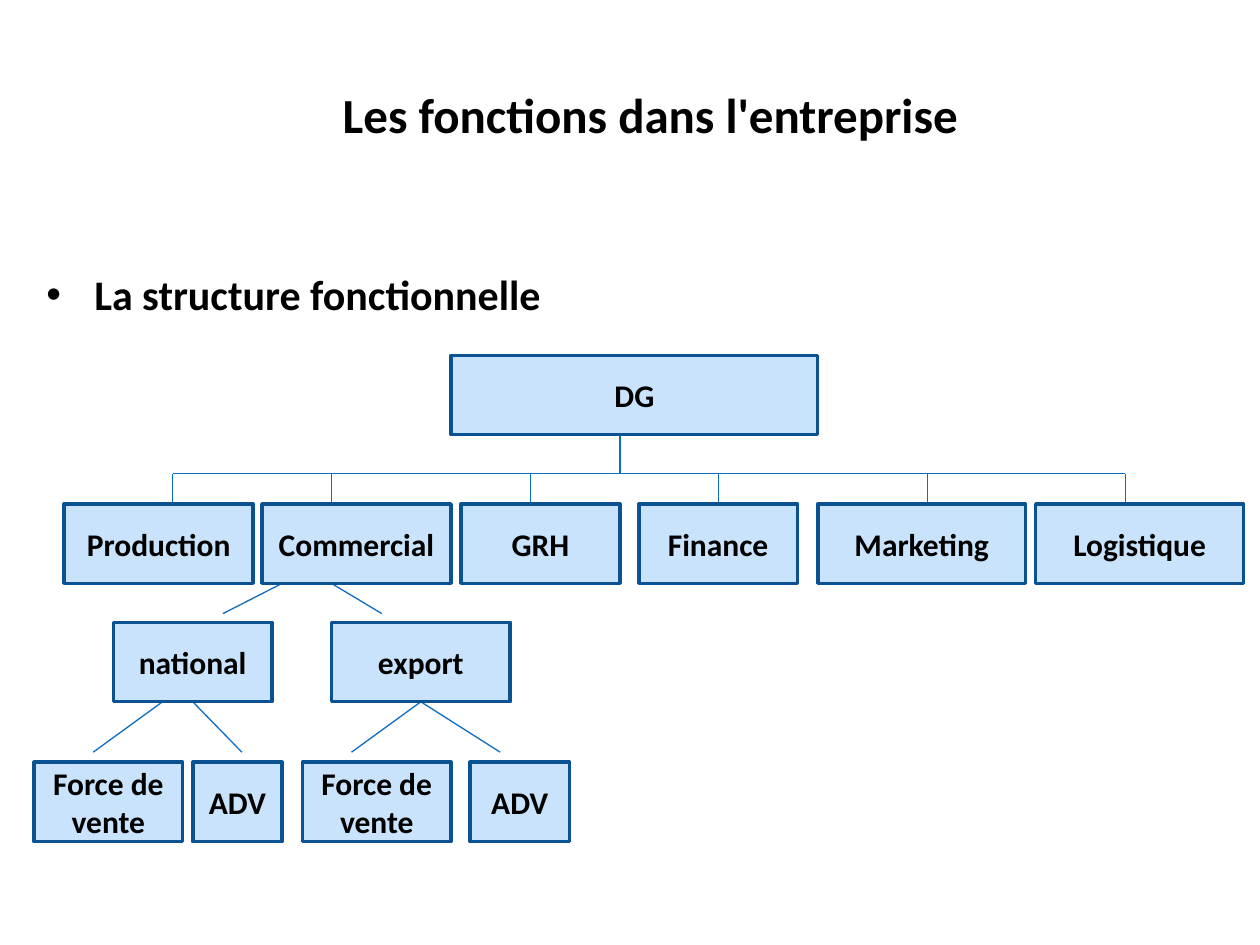
from lxml.etree import SubElement
from pptx import Presentation
from pptx.dml.color import RGBColor
from pptx.enum.shapes import MSO_CONNECTOR, MSO_SHAPE
from pptx.enum.text import MSO_ANCHOR, PP_ALIGN
from pptx.oxml.ns import qn
from pptx.util import Inches, Pt


def color(value):
    return RGBColor.from_string(value)


class OrganizationSlide:
    font_name = "Calibri"
    text_color = "000000"
    box_fill = "C8E3FB"
    box_border = "0B5292"
    link_color = "0A6DC6"
    box_height = 0.63

    def __init__(self, presentation):
        self.slide = presentation.slides.add_slide(presentation.slide_layouts[6])

    def set_text(self, shape, text, size, alignment, anchor, bullet=False):
        frame = shape.text_frame
        frame.word_wrap = True
        frame.vertical_anchor = anchor
        paragraph = frame.paragraphs[0]
        paragraph.text = text
        paragraph.alignment = alignment
        if bullet:
            properties = paragraph._p.get_or_add_pPr()
            properties.set("marL", str(Inches(0.38)))
            properties.set("indent", str(Inches(-0.38)))
            SubElement(properties, qn("a:buFont")).set("typeface", "Arial")
            SubElement(properties, qn("a:buChar")).set("char", "•")
        font = paragraph.font
        font.name = self.font_name
        font.size = Pt(size)
        font.bold = True
        font.color.rgb = color(self.text_color)

    def text(self, text, left, top, width, height, size, alignment, anchor, bullet=False):
        shape = self.slide.shapes.add_textbox(
            Inches(left), Inches(top), Inches(width), Inches(height))
        self.set_text(shape, text, size, alignment, anchor, bullet)

    def box(self, text, left, top, width):
        shape = self.slide.shapes.add_shape(
            MSO_SHAPE.RECTANGLE, Inches(left), Inches(top),
            Inches(width), Inches(self.box_height))
        shape.shadow.inherit = False
        shape.fill.solid()
        shape.fill.fore_color.rgb = color(self.box_fill)
        shape.line.color.rgb = color(self.box_border)
        shape.line.width = Pt(2)
        self.set_text(shape, text, 18, PP_ALIGN.CENTER, MSO_ANCHOR.MIDDLE)

    def link(self, start_x, start_y, end_x, end_y):
        connector = self.slide.shapes.add_connector(
            MSO_CONNECTOR.STRAIGHT, Inches(start_x), Inches(start_y),
            Inches(end_x), Inches(end_y))
        connector.line.color.rgb = color(self.link_color)
        connector.line.width = Pt(0.75)
        SubElement(connector._element.spPr, qn("a:effectLst"))


def main():
    presentation = Presentation()
    presentation.slide_width = Inches(10)
    presentation.slide_height = Inches(7.5)
    chart = OrganizationSlide(presentation)

    # Title and heading
    chart.text("Les fonctions dans l'entreprise", 1.67, 0.62, 6.98, 0.57, 28,
               PP_ALIGN.CENTER, MSO_ANCHOR.TOP)
    chart.text("La structure fonctionnelle", 0.27, 1.87, 7.58, 0.92, 24,
               PP_ALIGN.LEFT, MSO_ANCHOR.MIDDLE, bullet=True)

    # Rows of the chart: top, then (label, left, width) of each box
    director_top, function_top, market_top, team_top = 2.82, 4, 4.94, 6.05
    rows = [
        (director_top, [("DG", 3.58, 2.91)]),
        (function_top, [("Production", 0.51, 1.5), ("Commercial", 2.08, 1.5),
                        ("GRH", 3.66, 1.26), ("Finance", 5.07, 1.26),
                        ("Marketing", 6.49, 1.65), ("Logistique", 8.22, 1.65)]),
        (market_top, [("national", 0.9, 1.26), ("export", 2.63, 1.42)]),
        (team_top, [("Force de vente", 0.27, 1.18), ("ADV", 1.53, 0.71),
                    ("Force de vente", 2.4, 1.18), ("ADV", 3.73, 0.79)]),
    ]

    # Horizontal bar with a drop to each function
    bar_y = 3.76
    drops = [1.37, 2.63, 4.21, 5.7, 7.36, 8.93]
    chart.link(4.92, director_top + chart.box_height, 4.92, bar_y)
    chart.link(drops[0], bar_y, drops[-1], bar_y)
    for x in drops:
        chart.link(x, bar_y, x, function_top)

    # Slanted links below the functions and the markets: parent top, end, x pairs
    branches = [
        (function_top, 4.87, [(2.24, 1.77), (2.63, 3.03)]),
        (market_top, 5.97, [(1.29, 0.74), (1.53, 1.92), (3.34, 2.79), (3.34, 3.97)]),
    ]
    for parent_top, end_y, pairs in branches:
        for start_x, end_x in pairs:
            chart.link(start_x, parent_top + chart.box_height, end_x, end_y)

    # Boxes
    for top, boxes in rows:
        for label, left, width in boxes:
            chart.box(label, left, top, width)

    presentation.save("out.pptx")


if __name__ == "__main__":
    main()
